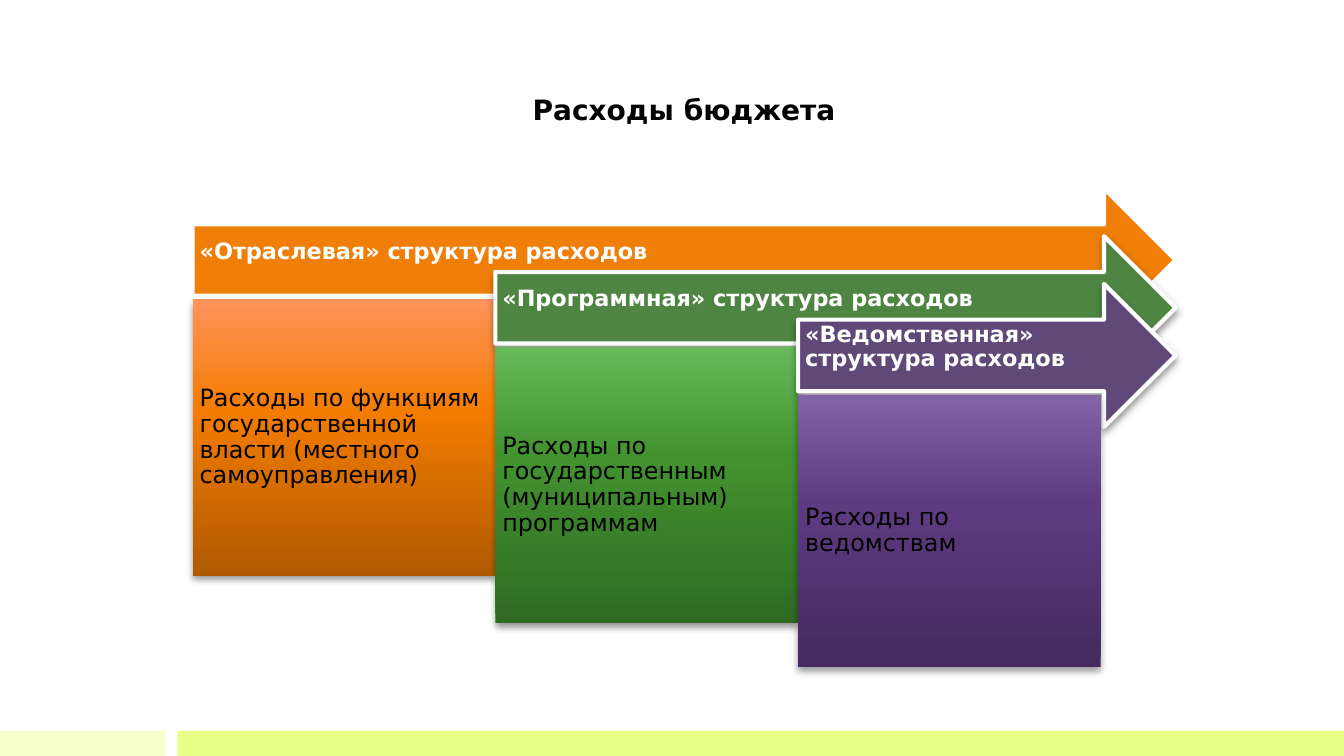
from copy import deepcopy
from pptx import Presentation
from pptx.dml.color import RGBColor
from pptx.enum.shapes import MSO_SHAPE
from pptx.enum.text import MSO_ANCHOR, PP_ALIGN
from pptx.oxml import parse_xml
from pptx.util import Inches, Pt

RECT = MSO_SHAPE.RECTANGLE
ARROW = MSO_SHAPE.RIGHT_ARROW
MIDDLE = MSO_ANCHOR.MIDDLE
LEFT, CENTER = PP_ALIGN.LEFT, PP_ALIGN.CENTER

BLACK = RGBColor(0x00, 0x00, 0x00)
WHITE = RGBColor(0xFF, 0xFF, 0xFF)
PALE = RGBColor(0xF6, 0xFF, 0xCC)
LIME = RGBColor(0xE9, 0xFF, 0x88)
ORANGE = RGBColor(0xF0, 0x7F, 0x09)
GREEN = RGBColor(0x4E, 0x85, 0x42)
PURPLE = RGBColor(0x60, 0x48, 0x78)
ORANGES = [RGBColor(0xB0, 0x5A, 0x00), RGBColor(0xF4, 0x7C, 0x00), RGBColor(0xFF, 0x94, 0x5C)]
GREENS = [RGBColor(0x2F, 0x6B, 0x22), RGBColor(0x42, 0x92, 0x30), RGBColor(0x66, 0xB9, 0x59)]
PURPLES = [RGBColor(0x44, 0x2A, 0x5E), RGBColor(0x5E, 0x3B, 0x81), RGBColor(0x83, 0x64, 0xA8)]

SHADOW = (
    '<a:outerShdw xmlns:a="http://schemas.openxmlformats.org/drawingml/2006/main" '
    'blurRad="66040" dist="38100" dir="5400000" rotWithShape="0">'
    '<a:srgbClr val="000000"><a:alpha val="40000"/></a:srgbClr></a:outerShdw>'
)

prs = Presentation()
prs.slide_width, prs.slide_height = Inches(13.33), Inches(7.5)
slide = prs.slides.add_slide(prs.slide_layouts[6])


def add_block(kind, x, y, w, h, shade):
    shape = slide.shapes.add_shape(kind, Inches(x), Inches(y), Inches(w), Inches(h))
    shape.shadow.inherit = False
    shape.line.fill.background()
    if shade:
        shape._element.spPr.xpath("a:effectLst")[0].append(parse_xml(SHADOW))
    return shape


def set_text(shape, text, size, color, bold, align):
    frame = shape.text_frame
    frame.text = text
    frame.word_wrap = True
    frame.vertical_anchor = MIDDLE
    para = frame.paragraphs[0]
    para.alignment = align
    font = para.runs[0].font
    font.name, font.size, font.bold = "DejaVu Sans", Pt(size), bold
    font.color.rgb = color
    return frame


for x, w, color in [(0, 1.64, PALE), (1.76, 11.57, LIME)]:
    strip = add_block(RECT, x, 7.25, w, 0.25, False)
    strip.fill.solid()
    strip.fill.fore_color.rgb = color

title = slide.shapes.add_textbox(Inches(1.66), Inches(0.62), Inches(10.25), Inches(0.92))
set_text(title, "Расходы бюджета", 20, BLACK, True, CENTER)

stages = [
    ("«Отраслевая» структура расходов",
     "Расходы по функциям государственной власти (местного самоуправления)",
     ORANGE, ORANGES, 2.74),
    ("«Программная» структура расходов",
     "Расходы по государственным (муниципальным) программам",
     GREEN, GREENS, 2.74),
    ("«Ведомственная» структура расходов",
     "Расходы по ведомствам",
     PURPLE, PURPLES, 2.7),
]
right = 11.66

for i, (head, body, color, shades, tall) in enumerate(stages):
    x = 1.91 + 3.003 * i
    y = 1.87 + 0.473 * i

    arrow = add_block(ARROW, x, y, right - x, 1.42, i > 0)
    arrow.fill.solid()
    arrow.fill.fore_color.rgb = color
    arrow.line.color.rgb = WHITE
    arrow.line.width = Pt(3)
    label = set_text(arrow, head, 16, WHITE, True, LEFT)
    label.margin_right, label.margin_bottom = Inches(0.28), Inches(0.23)

    box = add_block(RECT, x, y + 1.1, 3, tall, True)
    box.fill.gradient()
    box.fill.gradient_angle = 90
    stops = box._element.spPr.xpath("a:gradFill/a:gsLst")[0]
    stops.append(deepcopy(stops[1]))
    for stop, shade, place in zip(box.fill.gradient_stops, shades, (0, 0.6, 1)):
        stop.color.rgb = shade
        stop.position = place
    note = set_text(box, body, 17, BLACK, False, LEFT)
    note.margin_right = note.margin_bottom = Inches(0.07)

    for frame in (label, note):
        frame.margin_left = frame.margin_top = Inches(0.07)
        frame.paragraphs[0].line_spacing = 0.9

prs.save("out.pptx")
